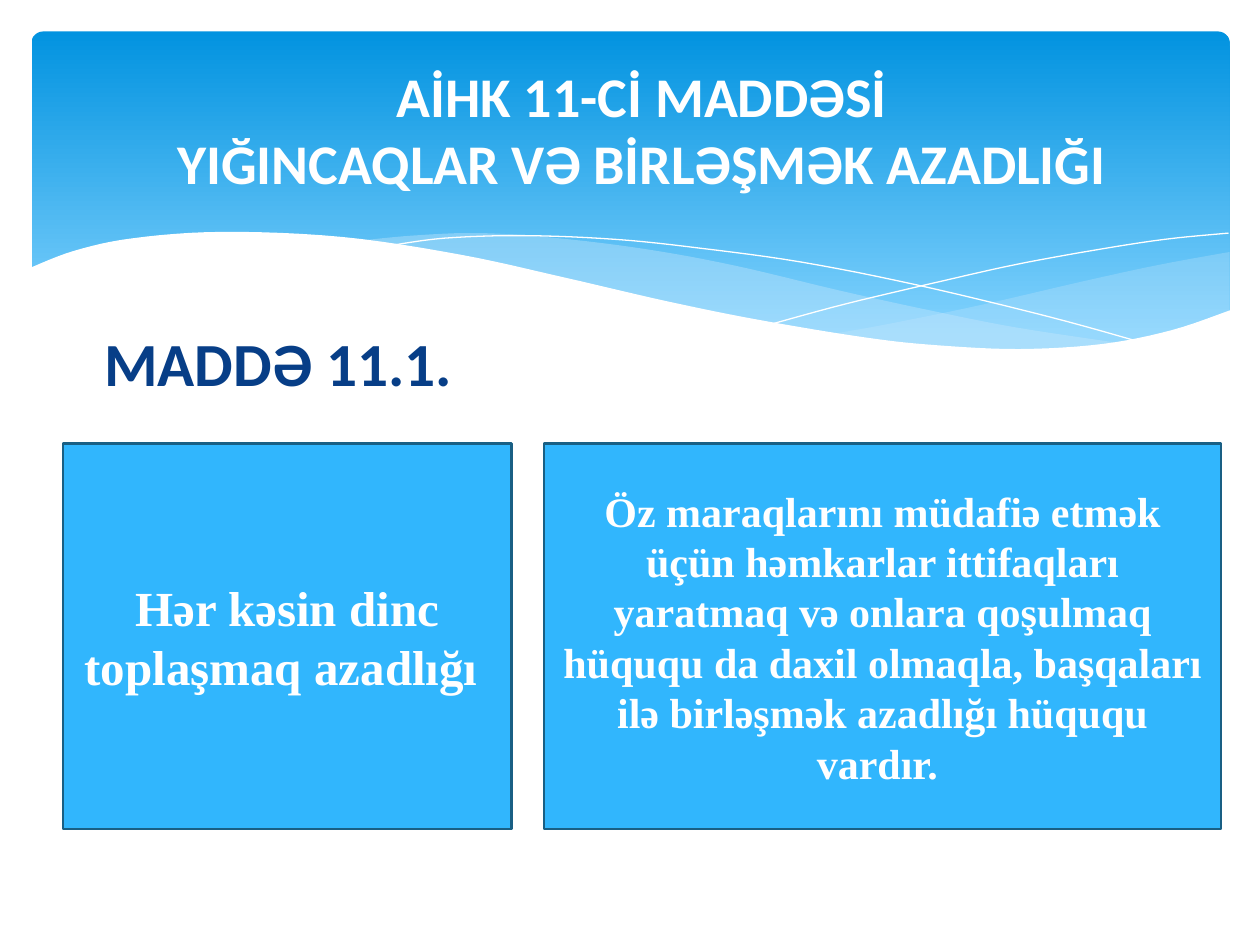
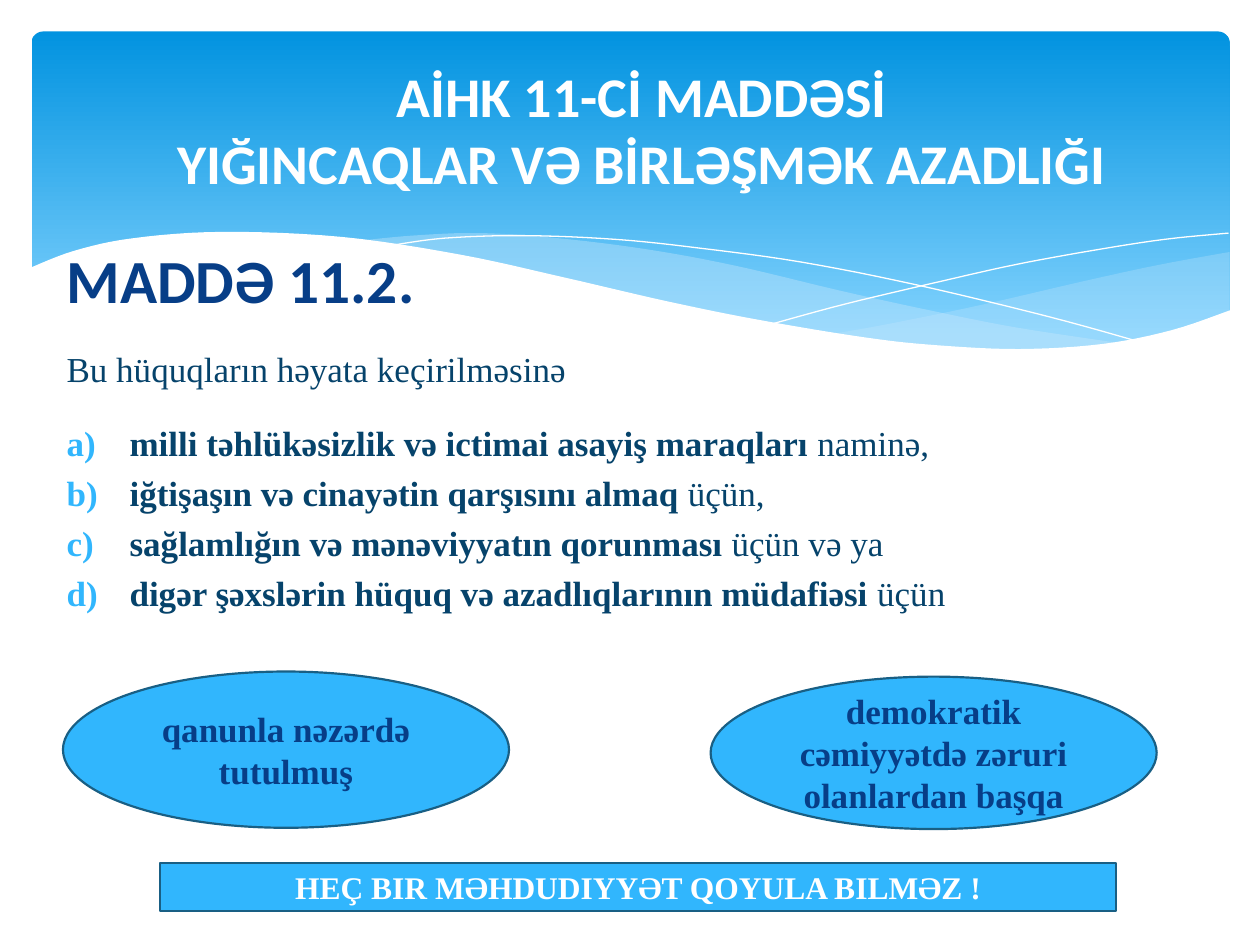
from dataclasses import dataclass

from lxml.etree import SubElement
from pptx import Presentation
from pptx.dml.color import RGBColor
from pptx.enum.shapes import MSO_SHAPE as Shape
from pptx.enum.text import MSO_ANCHOR as Anchor, MSO_AUTO_SIZE as AutoSize, PP_ALIGN as Align
from pptx.oxml.ns import qn
from pptx.util import Inches, Pt

WHITE = RGBColor(0xFF, 0xFF, 0xFF)
SKY = RGBColor(0x31, 0xB6, 0xFD)
STEEL = RGBColor(0x19, 0x5F, 0x84)
NAVY = RGBColor(0x07, 0x3E, 0x87)
INK = RGBColor(0x06, 0x43, 0x6B)
BAND_TOP = RGBColor(0x02, 0x93, 0xE0)
BAND_BOTTOM = RGBColor(0x83, 0xD3, 0xFE)
MIST = RGBColor(0xC6, 0xE7, 0xFC)
SANS, SERIF = "Calibri", "Times New Roman"
TITLE_LINES = ("AİHK 11-Cİ MADDƏSİ", "YIĞINCAQLAR VƏ BİRLƏŞMƏK AZADLIĞI")

Point = tuple[float, float]
Box = tuple[float, float, float, float]


@dataclass(frozen=True)
class Style:
    font: str
    size: int
    color: RGBColor
    bold: bool = True


@dataclass(frozen=True)
class Wave:
    curves: tuple[tuple[Point, ...], ...]
    fill: RGBColor | None = None
    opacity: int = 100


@dataclass(frozen=True)
class Panel:
    kind: Shape
    box: Box
    text: str
    style: Style


TITLE = Style(SANS, 32, WHITE)
HEADING = Style(SANS, 35, NAVY)
BODY = Style(SERIF, 20, INK, False)
BODY_BOLD = Style(SERIF, 20, INK)
OVAL = Style(SERIF, 20, NAVY)

WAVES = (
    Wave((((9.76, 2), (9.21, 2.1), (8.61, 2.23), (7.79, 2.42), (7.06, 2.57), (6.61, 2.65)),
          ((6.61, 2.65), (7.19, 2.72), (7.81, 2.77), (8.35, 2.77), (8.89, 2.72),
           (9.35, 2.62), (9.76, 2.47))), MIST, 29),
    Wave((((2.86, 1.91), (3.28, 1.87), (3.8, 1.85), (4.42, 1.89), (5.14, 1.98), (5.84, 2.11),
           (6.68, 2.31), (7.41, 2.47), (8.07, 2.6), (8.93, 2.73)),
          ((8.93, 2.73), (8.48, 2.77), (7.96, 2.78), (7.36, 2.75), (6.65, 2.66), (5.84, 2.52),
           (5.3, 2.4), (4.49, 2.22), (3.83, 2.07), (3.23, 1.96), (2.86, 1.91))), MIST, 40),
    Wave((((3.09, 1.95), (3.53, 1.89), (4.16, 1.87), (4.89, 1.9), (5.56, 1.97), (6.36, 2.08),
           (7.27, 2.26), (8.31, 2.51), (9.07, 2.72)),)),
    Wave((((6.13, 2.57), (6.72, 2.41), (7.48, 2.23), (8.06, 2.1), (8.66, 1.99), (9.24, 1.9),
           (9.75, 1.85)),)),
    Wave((((0.23, 2.13), (0.59, 1.99), (1.06, 1.89), (1.77, 1.84), (2.71, 1.88), (3.65, 2.02),
           (4.47, 2.2), (5.29, 2.39), (6.03, 2.54), (6.88, 2.68), (7.44, 2.74), (8.09, 2.77),
           (8.75, 2.73), (9.3, 2.62), (9.77, 2.46)),
          ((9.77, 3.29), (0.23, 3.29))), WHITE),
)

RIGHTS = (
    Panel(Shape.RECTANGLE, (0.5, 3.52, 3.56, 3.06), "Hər kəsin dinc toplaşmaq azadlığı ",
          Style(SERIF, 28, WHITE)),
    Panel(Shape.RECTANGLE, (4.32, 3.52, 5.37, 3.06),
          "Öz maraqlarını müdafiə etmək üçün həmkarlar ittifaqları yaratmaq və onlara "
          "qoşulmaq hüququ da daxil olmaqla, başqaları ilə birləşmək azadlığı hüququ vardır. ",
          Style(SERIF, 24, WHITE)),
)
LIMITS = (
    Panel(Shape.OVAL, (0.5, 5.33, 3.54, 1.24), "qanunla nəzərdə tutulmuş", OVAL),
    Panel(Shape.OVAL, (5.64, 5.37, 3.54, 1.21),
          "demokratik cəmiyyətdə zəruri olanlardan başqa", OVAL),
    Panel(Shape.RECTANGLE, (1.27, 6.85, 7.59, 0.38), "HEÇ BIR MƏHDUDIYYƏT QOYULA BILMƏZ !",
          Style(SERIF, 18, WHITE)),
)
GROUNDS = (
    ("milli təhlükəsizlik və ictimai asayiş maraqları ", "naminə,"),
    ("iğtişaşın və cinayətin qarşısını almaq ", "üçün,"),
    ("sağlamlığın və mənəviyyatın qorunması ", "üçün və ya"),
    ("digər şəxslərin hüquq və azadlıqlarının müdafiəsi ", "üçün"),
)


def inches(box: Box) -> list[Inches]:
    return [Inches(v) for v in box]


def add_run(p, text: str, style: Style) -> None:
    r = p.add_run()
    r.text = text
    r.font.name = style.font
    r.font.size = Pt(style.size)
    r.font.bold = style.bold
    r.font.color.rgb = style.color


def smooth(knots: tuple[Point, ...], steps: int = 6) -> list[Point]:
    if len(knots) < 3:
        return list(knots)
    padded = (knots[0], *knots, knots[-1])
    points = [knots[0]]
    for a, b, c, d in zip(padded, padded[1:], padded[2:], padded[3:]):
        for i in range(1, steps + 1):
            t = i / steps
            points.append(tuple(
                (2 * q + (r - p) * t + (2 * p - 5 * q + 4 * r - s) * t ** 2
                 + (3 * q - p - 3 * r + s) * t ** 3) / 2
                for p, q, r, s in zip(a, b, c, d)))
    return points


def draw_wave(slide, wave: Wave) -> None:
    points = [(Inches(x), Inches(y)) for curve in wave.curves for x, y in smooth(curve)]
    builder = slide.shapes.build_freeform(*points[0], scale=1.0)
    builder.add_line_segments(points[1:], close=wave.fill is not None)
    sp = builder.convert_to_shape()
    sp.shadow.inherit = False
    if wave.fill is None:
        sp.fill.background()
        sp.line.color.rgb = WHITE
        sp.line.width = Pt(0)
        return
    sp.fill.solid()
    sp.fill.fore_color.rgb = wave.fill
    sp.line.fill.background()
    if wave.opacity < 100:
        color = sp._element.spPr.find(qn("a:solidFill")).find(qn("a:srgbClr"))
        SubElement(color, qn("a:alpha"), val=str(wave.opacity * 1000))


def draw_band(slide) -> None:
    sp = slide.shapes.add_shape(Shape.ROUNDED_RECTANGLE, *inches((0.25, 0.25, 9.51, 2.7)))
    sp.adjustments[0] = 0.034
    sp.shadow.inherit = False
    sp.line.fill.background()
    sp.fill.gradient()
    sp.fill.gradient_angle = 270
    for stop, color, position in zip(sp.fill.gradient_stops, (BAND_TOP, BAND_BOTTOM), (0, 0.9)):
        stop.color.rgb = color
        stop.position = position
    for wave in WAVES:
        draw_wave(slide, wave)


def draw_title(slide) -> None:
    sp = slide.shapes.title
    sp.left, sp.top, sp.width, sp.height = inches((0.5, 0.37, 9.19, 1.3))
    slide.shapes._spTree.append(sp._element)
    tf = sp.text_frame
    tf.auto_size = AutoSize.NONE
    tf.vertical_anchor = Anchor.MIDDLE
    p = tf.paragraphs[0]
    p.alignment = Align.CENTER
    for i, line in enumerate(TITLE_LINES):
        if i:
            p.add_line_break()
        add_run(p, line, TITLE)


def new_slide(prs):
    slide = prs.slides.add_slide(prs.slide_layouts[5])
    draw_band(slide)
    draw_title(slide)
    return slide


def draw_panel(slide, panel: Panel) -> None:
    sp = slide.shapes.add_shape(panel.kind, *inches(panel.box))
    sp.shadow.inherit = False
    sp.fill.solid()
    sp.fill.fore_color.rgb = SKY
    sp.line.color.rgb = STEEL
    sp.line.width = Pt(1.25)
    tf = sp.text_frame
    tf.word_wrap = True
    tf.vertical_anchor = Anchor.MIDDLE
    p = tf.paragraphs[0]
    p.alignment = Align.CENTER
    add_run(p, panel.text, panel.style)


def add_text(slide, box: Box, heading: str):
    tf = slide.shapes.add_textbox(*inches(box)).text_frame
    tf.word_wrap = True
    add_run(tf.paragraphs[0], heading, HEADING)
    return tf


def letter_item(p) -> None:
    pPr = p._p.get_or_add_pPr()
    pPr.set("marL", str(Inches(0.5)))
    pPr.set("indent", str(-Inches(0.5)))
    SubElement(SubElement(pPr, qn("a:buClr")), qn("a:srgbClr"), val=str(SKY))
    SubElement(pPr, qn("a:buFont"), typeface=SERIF)
    SubElement(pPr, qn("a:buAutoNum"), type="alphaLcParenR")


def rights_slide(prs) -> None:
    slide = new_slide(prs)
    for panel in RIGHTS:
        draw_panel(slide, panel)
    add_text(slide, (0.73, 2.53, 3.1, 0.69), "MADDƏ 11.1.")


def limits_slide(prs) -> None:
    slide = new_slide(prs)
    tf = add_text(slide, (0.43, 1.87, 9.21, 5.36), "MADDƏ 11.2.")
    p = tf.add_paragraph()
    p.space_before = Pt(18.4)
    add_run(p, "Bu hüquqların həyata keçirilməsinə", BODY)
    for i, (ground, ending) in enumerate(GROUNDS):
        p = tf.add_paragraph()
        p.space_before = Pt(4.6 if i else 18.4)
        letter_item(p)
        add_run(p, ground, BODY_BOLD)
        add_run(p, ending, BODY)
    for panel in LIMITS:
        draw_panel(slide, panel)


def main() -> None:
    prs = Presentation()
    prs.slide_width, prs.slide_height = Inches(10), Inches(7.5)
    rights_slide(prs)
    limits_slide(prs)
    prs.save("out.pptx")


if __name__ == "__main__":
    main()
